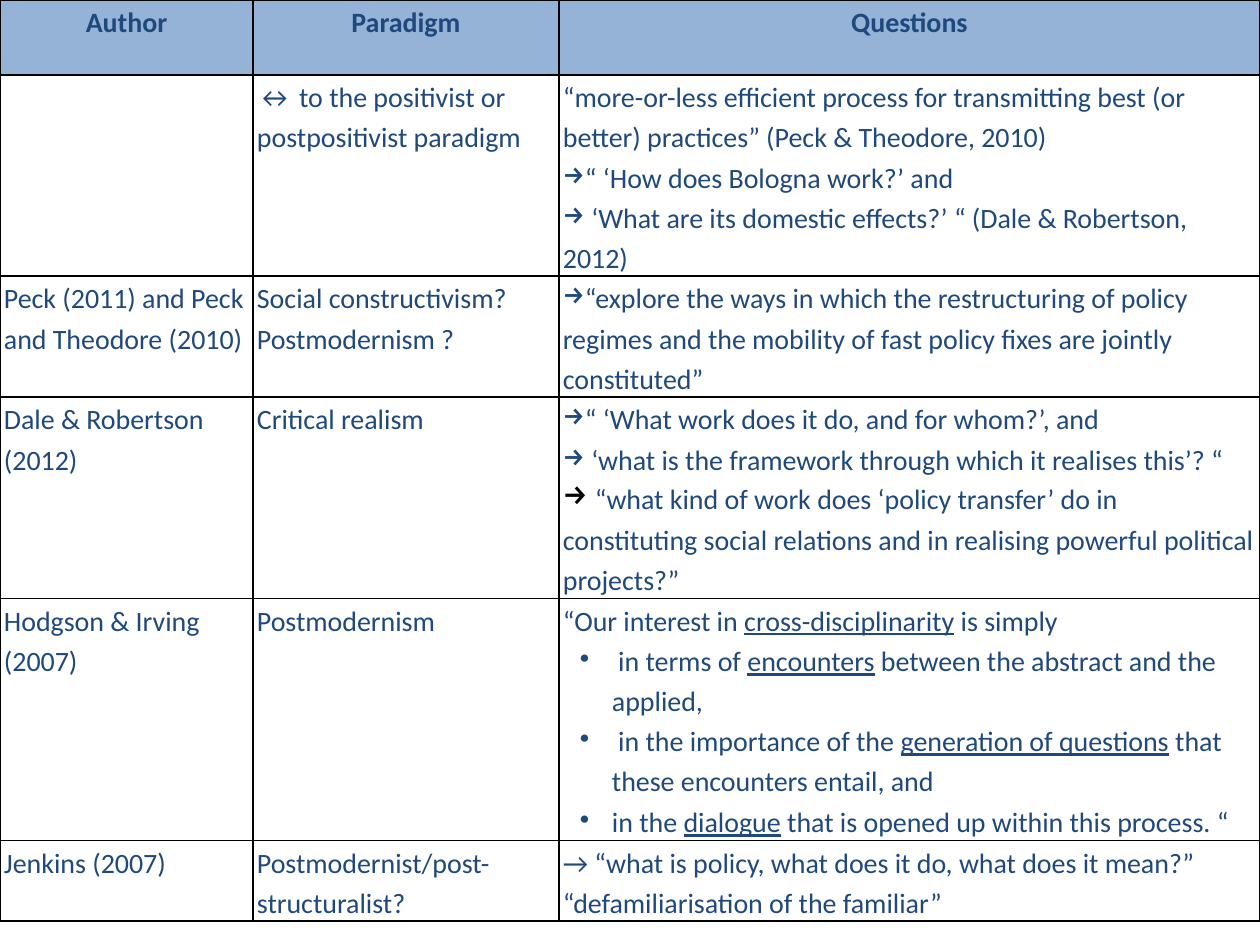
import dataclasses

import lxml.etree
import pptx
import pptx.dml.color
import pptx.enum.text
import pptx.oxml.ns
import pptx.util

PX = 914400 / 126
NAVY = pptx.dml.color.RGBColor(0x1F, 0x49, 0x7D)
BLACK = pptx.dml.color.RGBColor(0, 0, 0)
HEADER_BLUE = pptx.dml.color.RGBColor(0x95, 0xB3, 0xD7)
COLUMN_WIDTHS = (253, 306, 701)
ROW_HEIGHTS = (75, 201, 121, 201, 242, 80)


@dataclasses.dataclass(frozen=True)
class Run:
    text: str
    size: int = 16
    color: pptx.dml.color.RGBColor = NAVY
    underline: bool = False


@dataclasses.dataclass(frozen=True)
class Para:
    runs: tuple[Run, ...]
    bullet: str = ""
    level: int = 0
    left: int = 0
    indent: int = 0


def plain(*texts: str) -> list[Para]:
    return [Para((Run(text),)) for text in texts]


def arrow(*runs: Run) -> Para:
    return Para(runs, bullet="→")


def dot(before: str, key: str, after: str) -> Para:
    runs = (Run(before), Run(key, underline=True), Run(after))
    return Para(runs, bullet="•", level=3, left=49, indent=-32)


HEADERS = ("Author", "Paradigm", "Questions")
ROWS = (
    (
        [],
        plain("↔ to the positivist or postpositivist paradigm"),
        plain("“more-or-less efficient process for transmitting best (or better) "
              "practices” (Peck & Theodore, 2010)")
        + [arrow(Run("“ ‘How does Bologna work?’ and")),
           arrow(Run(" ‘What are its domestic effects?’ “ (Dale & Robertson, 2012)"))],
    ),
    (
        plain("Peck (2011) and Peck and Theodore (2010)"),
        plain("Social constructivism?", "Postmodernism ?"),
        [arrow(Run("“explore the ways in which the restructuring of policy regimes and "
                   "the mobility of fast policy fixes are jointly constituted”"))],
    ),
    (
        plain("Dale & Robertson (2012)"),
        plain("Critical realism"),
        [arrow(Run("“ ‘What work does it do, and for whom?’, and")),
         arrow(Run(" ‘what is the framework through which it realises this’? “")),
         arrow(Run(" ", size=18, color=BLACK),
               Run("“what kind of work does ‘policy transfer’ do in constituting social "
                   "relations and in realising powerful political projects?”"))],
    ),
    (
        plain("Hodgson & Irving (2007)"),
        plain("Postmodernism"),
        [Para((Run("“Our interest in "), Run("cross-disciplinarity", underline=True),
               Run(" is simply"))),
         dot(" in terms of ", "encounters", " between the abstract and the applied,"),
         dot(" in the importance of the ", "generation of questions",
             " that these encounters entail, and"),
         dot("in the ", "dialogue", " that is opened up within this process. “")],
    ),
    (
        plain("Jenkins (2007)"),
        plain("Postmodernist/post-structuralist?"),
        plain("→ “what is policy, what does it do, what does it mean?” "
              "“defamiliarisation of the familiar”"),
    ),
)


def px(n: int) -> pptx.util.Emu:
    return pptx.util.Emu(round(n * PX))


def sub(parent, tag: str, **attrs: str):
    return lxml.etree.SubElement(parent, pptx.oxml.ns.qn(tag), attrs)


def add_run(p, text: str, *, size: int, color: pptx.dml.color.RGBColor,
            bold: bool = False, underline: bool = False) -> None:
    r = p.add_run()
    r.text = text
    r.font.name = "Calibri"
    r.font.size = pptx.util.Pt(size)
    r.font.color.rgb = color
    r.font.bold = bold
    r.font.underline = underline


def format_cell(cell, header: bool) -> None:
    """Set margins, black borders and fill; borders must precede the fill."""
    cell.margin_left = cell.margin_right = px(4)
    cell.margin_top = cell.margin_bottom = 0
    tc_pr = cell._tc.get_or_add_tcPr()
    for side in ("a:lnL", "a:lnR", "a:lnT", "a:lnB"):
        ln = sub(tc_pr, side, w=str(pptx.util.Pt(1)))
        sub(sub(ln, "a:solidFill"), "a:srgbClr", val=str(BLACK))
    if header:
        cell.fill.solid()
        cell.fill.fore_color.rgb = HEADER_BLUE
    else:
        cell.fill.background()


def fill_cell(cell, paras: list[Para], header: bool = False) -> None:
    format_cell(cell, header)
    tf = cell.text_frame
    for i, para in enumerate(paras):
        p = tf.add_paragraph() if i else tf.paragraphs[0]
        p.line_spacing = pptx.util.Pt(23)
        p.level = para.level
        if header:
            p.alignment = pptx.enum.text.PP_ALIGN.CENTER
        if para.bullet:
            p_pr = p._p.get_or_add_pPr()
            p_pr.set("marL", str(px(para.left)))
            p_pr.set("indent", str(px(para.indent)))
            sub(p_pr, "a:buChar", char=para.bullet)
        for run in para.runs:
            add_run(p, run.text, size=run.size, color=run.color,
                    bold=header, underline=run.underline)


def main() -> None:
    prs = pptx.Presentation()
    prs.slide_width, prs.slide_height = px(1260), px(945)
    s = prs.slides.add_slide(prs.slide_layouts[6])
    table = s.shapes.add_table(
        len(ROW_HEIGHTS), len(COLUMN_WIDTHS), 0, 0,
        px(sum(COLUMN_WIDTHS)), px(sum(ROW_HEIGHTS))).table
    table.horz_banding = False
    for column, width in zip(table.columns, COLUMN_WIDTHS):
        column.width = px(width)
    for row, height in zip(table.rows, ROW_HEIGHTS):
        row.height = px(height)
    for c, title in enumerate(HEADERS):
        fill_cell(table.cell(0, c), plain(title), header=True)
    for r, cells in enumerate(ROWS, start=1):
        for c, paras in enumerate(cells):
            fill_cell(table.cell(r, c), paras)
    prs.save("out.pptx")


if __name__ == "__main__":
    main()
